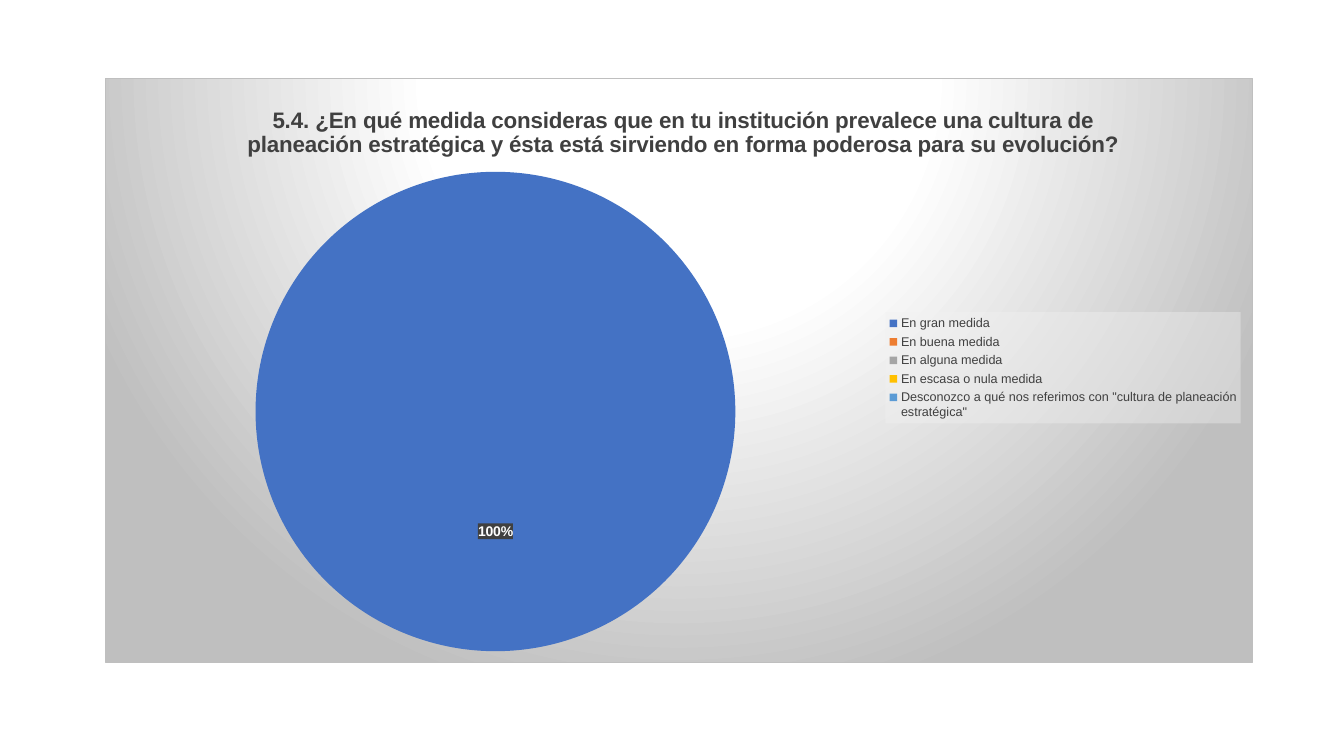
import pptx
import pptx.chart.data
import pptx.dml.color
import pptx.enum.chart
import pptx.oxml
import pptx.oxml.ns
import pptx.util
from pptx.util import Cm

TITLE = ("5.4. ¿En qué medida consideras que en tu institución prevalece una cultura de "
         "planeación estratégica y ésta está sirviendo en forma poderosa para su evolución?")
BLUE = pptx.dml.color.RGBColor(0x44, 0x72, 0xC4)
ORANGE = pptx.dml.color.RGBColor(0xED, 0x7D, 0x31)
GRAY = pptx.dml.color.RGBColor(0xA5, 0xA5, 0xA5)
GOLD = pptx.dml.color.RGBColor(0xFF, 0xC0, 0x00)
SKY = pptx.dml.color.RGBColor(0x5B, 0x9B, 0xD5)
DARK = pptx.dml.color.RGBColor(0x40, 0x40, 0x40)
SILVER = pptx.dml.color.RGBColor(0xBF, 0xBF, 0xBF)
PALE = pptx.dml.color.RGBColor(0xF2, 0xF2, 0xF2)
WHITE = pptx.dml.color.RGBColor(0xFF, 0xFF, 0xFF)

ANSWERS = [
    ("En gran medida", 100, BLUE),
    ("En buena medida", 0, ORANGE),
    ("En alguna medida", 0, GRAY),
    ("En escasa o nula medida", 0, GOLD),
    ('Desconozco a qué nos referimos con "cultura de planeación estratégica"', 0, SKY),
]
FRAME = (Cm(2.65), Cm(1.96), Cm(28.92), Cm(14.76))
PIE_AREA = {"x": 0.13, "y": 0.16, "w": 0.42, "h": 0.82}
LEGEND_AREA = {"x": 0.68, "y": 0.4, "w": 0.31, "h": 0.19}
TITLE_AREA = {"x": 0.12, "y": 0.04}
BACKDROP = [(0, WHITE), (39, WHITE), (100, SILVER)]

TITLE_FONT = {"name": "Arial", "size": pptx.util.Pt(16), "bold": True}
LEGEND_FONT = {"name": "Arial", "size": pptx.util.Pt(9), "bold": False}
LABEL_FONT = {"name": "Arial", "size": pptx.util.Pt(10), "bold": True}


def set_font(font, values, color):
    for name, value in values.items():
        setattr(font, name, value)
    font.color.rgb = color


def element(tag, content):
    spaces = pptx.oxml.ns.nsdecls("c", "a")
    return pptx.oxml.parse_xml(f"<c:{tag} {spaces}>{content}</c:{tag}>")


def layout(area, inner=False):
    target = '<c:layoutTarget val="inner"/>' if inner else ""
    modes = "".join(f'<c:{key}Mode val="edge"/>' for key in "xy")
    sizes = "".join(f'<c:{key} val="{value}"/>' for key, value in area.items())
    return element("layout", f"<c:manualLayout>{target}{modes}{sizes}</c:manualLayout>")


def see_through(color, percent):
    return element("spPr", f'<a:solidFill><a:srgbClr val="{color}">'
                           f'<a:alpha val="{percent * 1000}"/></a:srgbClr></a:solidFill>')


def backdrop():
    stops = "".join(f'<a:gs pos="{place * 1000}"><a:srgbClr val="{color}"/></a:gs>'
                    for place, color in BACKDROP)
    return element("spPr", f'<a:gradFill><a:gsLst>{stops}</a:gsLst><a:path path="circle">'
                           '<a:fillToRect l="50000" t="-80000" r="50000" b="180000"/></a:path>'
                           f'</a:gradFill><a:ln w="{pptx.util.Pt(0.75)}"><a:solidFill>'
                           f'<a:srgbClr val="{SILVER}"/></a:solidFill></a:ln>')


def child(parent, name):
    return parent.find(pptx.oxml.ns.qn(f"c:{name}"))


deck = pptx.Presentation()
deck.slide_width, deck.slide_height = Cm(33.87), Cm(19.05)
page = deck.slides.add_slide(deck.slide_layouts[6])

data = pptx.chart.data.CategoryChartData()
data.categories = [answer for answer, value, color in ANSWERS]
data.add_series("Series 1", [value for answer, value, color in ANSWERS])
chart = page.shapes.add_chart(pptx.enum.chart.XL_CHART_TYPE.PIE, *FRAME, data).chart
set_font(chart.font, {"name": "Arial", "size": pptx.util.Pt(10)}, DARK)

chart.has_title = True
title = chart.chart_title
title.include_in_layout = False
title.text_frame.text = TITLE
set_font(title.text_frame.paragraphs[0].runs[0].font, TITLE_FONT, DARK)

chart.has_legend = True
legend = chart.legend
legend.position = pptx.enum.chart.XL_LEGEND_POSITION.RIGHT
legend.include_in_layout = False
set_font(legend.font, LEGEND_FONT, DARK)

plot = chart.plots[0]
plot.vary_by_categories = True
series = plot.series[0]
for index, (answer, value, color) in enumerate(ANSWERS):
    fill = series.points[index].format.fill
    fill.solid()
    fill.fore_color.rgb = color

labels = series.data_labels
for name, value in {"show_percentage": True, "show_value": False,
                    "number_format": "0%", "number_format_is_linked": False,
                    "position": pptx.enum.chart.XL_LABEL_POSITION.CENTER}.items():
    setattr(labels, name, value)
set_font(labels.font, LABEL_FONT, WHITE)

root = chart.element
body = child(root, "chart")
body_title, body_plot, body_legend = (child(body, name) for name in ("title", "plotArea", "legend"))
for part, area in ((body_title, TITLE_AREA), (body_plot, PIE_AREA), (body_legend, LEGEND_AREA)):
    old = child(part, "layout")
    if old is not None:
        part.remove(old)
child(body_title, "tx").addnext(layout(TITLE_AREA))
body_plot.insert(0, layout(PIE_AREA, inner=True))
child(body_legend, "legendPos").addnext(layout(LEGEND_AREA))
child(body_legend, "txPr").addprevious(see_through(PALE, 39))
body.addnext(backdrop())

series_labels = child(series.format.fill and plot.series[0].points[0].data_label and
                      body_plot.find(".//" + pptx.oxml.ns.qn("c:ser")), "dLbls")
child(series_labels, "txPr").addprevious(see_through(DARK, 75))
empty = [index for index, (answer, value, color) in enumerate(ANSWERS) if value == 0]
for place, index in enumerate(empty):
    series_labels.insert(place, element("dLbl", f'<c:idx val="{index}"/><c:delete val="1"/>'))

deck.save("out.pptx")
